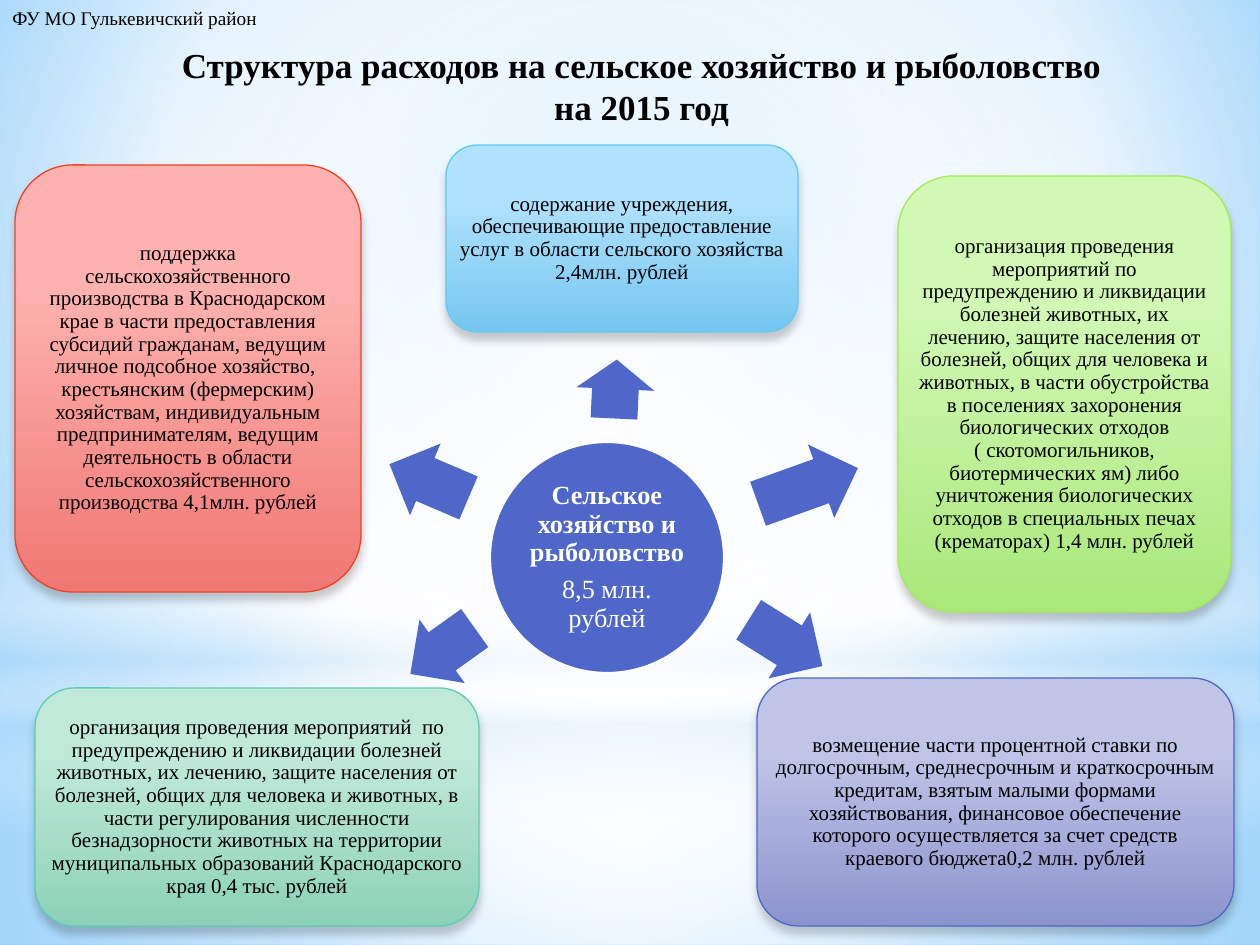
import pptx
import pptx.util
import pptx.oxml
import pptx.oxml.ns
from pptx.dml.color import RGBColor
from pptx.enum.shapes import MSO_SHAPE
from pptx.enum.text import MSO_ANCHOR, MSO_AUTO_SIZE, PP_ALIGN

PX = 914400 / 126
FONT = "Times New Roman"
BLACK = RGBColor(0x00, 0x00, 0x00)
WHITE = RGBColor(0xFF, 0xFF, 0xFF)
BLUE = RGBColor(0x4E, 0x67, 0xC8)
PALE = RGBColor(0xB4, 0xDC, 0xFA)
SKY = RGBColor(0x9E, 0xD5, 0xFF)
DEEP_SKY = RGBColor(0x5B, 0xB9, 0xFF)

HEADER = "ФУ МО Гулькевичский район"
TITLE = "Структура расходов на сельское хозяйство и рыболовство на 2015 год"
HUB = ["Сельское хозяйство и рыболовство", "8,5 млн. рублей"]

# Cards: box in px, top colour, bottom colour, outline, text
CARDS = [
    ((15, 165, 346, 427), RGBColor(0xFD, 0xB2, 0xAF), RGBColor(0xF0, 0x78, 0x73),
     RGBColor(0xF1, 0x41, 0x24),
     "поддержка сельскохозяйственного производства в Краснодарском крае в части "
     "предоставления субсидий гражданам, ведущим личное подсобное хозяйство,  "
     "крестьянским (фермерским) хозяйствам, индивидуальным предпринимателям, ведущим "
     "деятельность в области сельскохозяйственного производства 4,1млн. рублей"),
    ((35, 688, 444, 238), RGBColor(0xC0, 0xE9, 0xDA), RGBColor(0x8C, 0xD1, 0xB8),
     RGBColor(0x5D, 0xCE, 0xAF),
     "организация проведения мероприятий  по предупреждению и ликвидации болезней "
     "животных, их лечению, защите населения от болезней, общих для человека и животных, "
     "в части регулирования численности безнадзорности животных на территории "
     "муниципальных образований Краснодарского края 0,4 тыс. рублей"),
    ((757, 678, 477, 248), RGBColor(0xC0, 0xC5, 0xE8), RGBColor(0x8C, 0x94, 0xCE), BLUE,
     "возмещение части процентной ставки по долгосрочным, среднесрочным и краткосрочным "
     "кредитам, взятым малыми формами хозяйствования, финансовое обеспечение которого "
     "осуществляется за счет средств краевого бюджета0,2 млн. рублей"),
    ((898, 176, 333, 436), RGBColor(0xD1, 0xF8, 0xB5), RGBColor(0xAA, 0xE8, 0x7B),
     RGBColor(0xA7, 0xEA, 0x52),
     "организация проведения мероприятий по предупреждению и ликвидации болезней "
     "животных, их лечению, защите населения от болезней, общих для человека и животных, "
     "в части обустройства в поселениях захоронения биологических отходов "
     "( скотомогильников, биотермических ям) либо уничтожения биологических отходов "
     "в специальных печах (крематорах) 1,4 млн. рублей"),
    ((446, 145, 352, 187), RGBColor(0xB1, 0xE2, 0xFD), RGBColor(0x76, 0xC6, 0xF1),
     RGBColor(0x5E, 0xCC, 0xF3),
     "содержание учреждения, обеспечивающие предоставление услуг в области сельского "
     "хозяйства 2,4млн. рублей"),
]

# Arrows: left, top, length in px, rotation
ARROW_HEIGHT = 78
ARROWS = [(386, 442, 86, 203.1), (403, 612, 79, 144.5), (742, 604, 87, 32.1),
          (755, 447, 106, 340.3), (586, 350, 59, 272.7)]

# Backdrop layers: preset, box in px, stops (position, colour, opacity), centre
CENTRE = (50, 50, 50, 50)
LAYERS = [
    (MSO_SHAPE.RECTANGLE, (0, 703, 1260, 242),
     [(0, WHITE, 91), (37, WHITE, 76), (100, PALE, 79)], CENTRE),
    (MSO_SHAPE.RECTANGLE, (0, 0, 1260, 703),
     [(0, WHITE, 89), (48, WHITE, 62), (100, PALE, 79)], CENTRE),
    (MSO_SHAPE.RECTANGLE, (0, 519, 1260, 315),
     [(0, WHITE, 0), (29, WHITE, 30), (45, PALE, 40), (55, WHITE, 26),
      (65, PALE, 60), (100, WHITE, 0)], None),
    (MSO_SHAPE.OVAL, (0, 220, 1260, 703), [(0, WHITE, 100), (56, WHITE, 0)], CENTRE),
]


def px(*lengths):
    return [round(length * PX) for length in lengths]


def set_gradient(fill, holder, stops, centre=None):
    """Circular around centre (left, top, right, bottom in %), else top to bottom."""
    fill.solid()
    marks = "".join(
        f'<a:gs pos="{pos * 1000}"><a:srgbClr val="{color}">'
        f'<a:alpha val="{opacity * 1000}"/></a:srgbClr></a:gs>'
        for pos, color, opacity in stops)
    if centre:
        sides = " ".join(f'{side}="{part * 1000}"' for side, part in zip("ltrb", centre))
        course = f'<a:path path="circle"><a:fillToRect {sides}/></a:path>'
    else:
        course = '<a:lin ang="5400000" scaled="0"/>'
    gradient = pptx.oxml.parse_xml(
        f'<a:gradFill {pptx.oxml.ns.nsdecls("a")} rotWithShape="1">'
        f'<a:gsLst>{marks}</a:gsLst>{course}</a:gradFill>')
    holder.replace(holder.find(pptx.oxml.ns.qn("a:solidFill")), gradient)


def add_shape(preset, box, color=None, outline=None, width=0.75):
    shape = slide.shapes.add_shape(preset, *px(*box))
    shape.shadow.inherit = False
    if color is not None:
        shape.fill.solid()
        shape.fill.fore_color.rgb = color
    if outline is None:
        shape.line.fill.background()
    else:
        shape.line.color.rgb = outline
        shape.line.width = pptx.util.Pt(width)
    return shape


def add_drop_shadow(shape):
    effects = shape._element.spPr.find(pptx.oxml.ns.qn("a:effectLst"))
    effects.append(pptx.oxml.parse_xml(
        f'<a:outerShdw {pptx.oxml.ns.nsdecls("a")} blurRad="63500" dist="50800" '
        'dir="5400000" rotWithShape="0"><a:srgbClr val="000000">'
        '<a:alpha val="20000"/></a:srgbClr></a:outerShdw>'))


def write(frame, lines, size, color, align, bold_first=False):
    frame.text = "\n".join(lines)
    for number, paragraph in enumerate(frame.paragraphs):
        paragraph.alignment = align
        for run in paragraph.runs:
            run.font.name = FONT
            run.font.size = pptx.util.Pt(size)
            run.font.color.rgb = color
            run.font.bold = bold_first and number == 0


def write_inside(shape, lines, size, color, bold_first=False):
    frame = shape.text_frame
    frame.word_wrap = True
    frame.vertical_anchor = MSO_ANCHOR.MIDDLE
    frame.margin_left = frame.margin_right = pptx.util.Inches(0.02)
    frame.margin_top = frame.margin_bottom = pptx.util.Inches(0.02)
    write(frame, lines, size, color, PP_ALIGN.CENTER, bold_first)
    for paragraph in frame.paragraphs:
        paragraph.line_spacing = 0.9
        paragraph.space_after = pptx.util.Pt(size * 0.35)


def add_caption(box, text, size, align, wrap, bold):
    frame = slide.shapes.add_textbox(*px(*box)).text_frame
    frame.word_wrap = wrap
    frame.auto_size = MSO_AUTO_SIZE.SHAPE_TO_FIT_TEXT
    write(frame, [text], size, BLACK, align, bold)


deck = pptx.Presentation()
deck.slide_width, deck.slide_height = px(1260, 945)
slide = deck.slides.add_slide(deck.slide_layouts[6])

# Background and its translucent layers
backdrop = slide.background.fill
backdrop.solid()
set_gradient(backdrop, slide.element.xpath("p:cSld/p:bg/p:bgPr")[0],
             [(0, SKY, 100), (60, WHITE, 100), (100, DEEP_SKY, 100)], (20, 10, 20, 60))
for preset, box, stops, centre in LAYERS:
    layer = add_shape(preset, box)
    set_gradient(layer.fill, layer._element.spPr, stops, centre)

# Hub
hub = add_shape(MSO_SHAPE.OVAL, (490, 442, 234, 231), BLUE, WHITE, 1.25)
write_inside(hub, HUB, 15, WHITE, bold_first=True)

# Arrows and cards
for (left, top, length, rotation), (box, light, dark, outline, text) in zip(ARROWS, CARDS):
    arrow = add_shape(MSO_SHAPE.RIGHT_ARROW, (left, top, length, ARROW_HEIGHT), BLUE)
    arrow.adjustments[0], arrow.adjustments[1] = 0.6, 0.5
    arrow.rotation = rotation
    card = add_shape(MSO_SHAPE.ROUNDED_RECTANGLE, box, outline=outline)
    set_gradient(card.fill, card._element.spPr, [(28, light, 100), (100, dark, 100)])
    add_drop_shadow(card)
    write_inside(card, [text], 12, BLACK)

# Title and header
add_caption((160, 37, 963, 97), TITLE, 20, PP_ALIGN.CENTER, True, True)
add_caption((0, 0, 284, 37), HEADER, 11, PP_ALIGN.LEFT, False, False)

deck.save("out.pptx")
